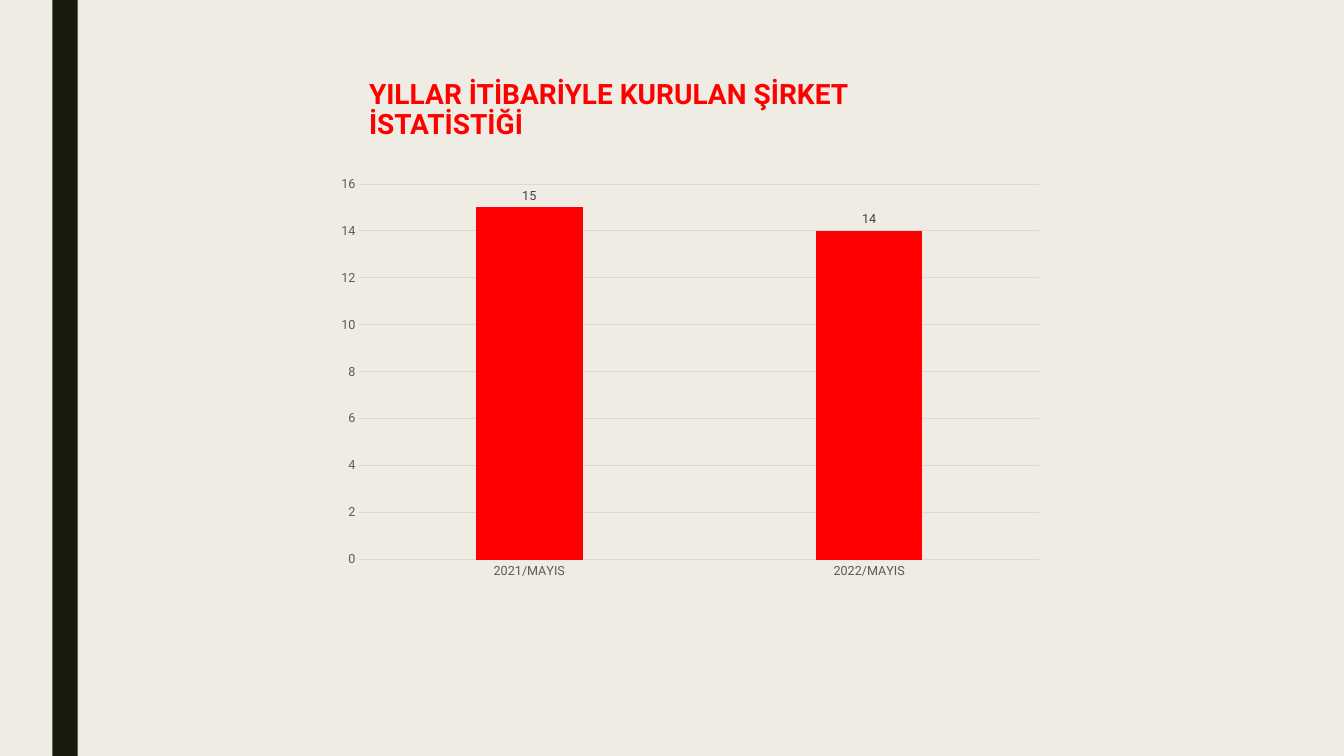
"""Build a slide with a column chart of companies founded per year."""
import pptx
import pptx.chart.data
import pptx.dml.color
import pptx.enum.chart
import pptx.enum.shapes
import pptx.enum.text
import pptx.util
from pptx.util import Inches

COLORS = {"background": "EFEDE3", "bar": "191B0E", "accent": "FF0000",
          "axis": "595959", "grid": "D9D9D9", "label": "404040", "text": "000000"}
FONT = "Roboto"


def rgb(name):
    return pptx.dml.color.RGBColor.from_string(COLORS[name])


def set_font(font, size, color):
    font.name = FONT
    font.size = pptx.util.Pt(size)
    font.color.rgb = rgb(color)


prs = pptx.Presentation()
prs.slide_width = Inches(13.33)
prs.slide_height = Inches(7.5)
s = prs.slides.add_slide(prs.slide_layouts[5])
s.background.fill.solid()
s.background.fill.fore_color.rgb = rgb("background")

bar = s.shapes.add_shape(pptx.enum.shapes.MSO_SHAPE.RECTANGLE,
                         Inches(0.52), 0, Inches(0.25), Inches(7.5))
bar.shadow.inherit = False
bar.fill.solid()
bar.fill.fore_color.rgb = rgb("bar")
bar.line.fill.background()

title = s.shapes.title
title.left, title.top = Inches(3.56), Inches(0.75)
title.width, title.height = Inches(5.93), Inches(0.42)
tf = title.text_frame
tf.text = "YILLAR İTİBARİYLE KURULAN ŞİRKET İSTATİSTİĞİ"
tf.word_wrap = True
tf.auto_size = pptx.enum.text.MSO_AUTO_SIZE.NONE
tf.vertical_anchor = pptx.enum.text.MSO_ANCHOR.TOP
p = tf.paragraphs[0]
p.alignment = pptx.enum.text.PP_ALIGN.LEFT
p.line_spacing = 0.89
r = p.runs[0]
set_font(r.font, 20, "accent")
r.font.bold = True

data = pptx.chart.data.CategoryChartData()
data.categories = ["2021/MAYIS", "2022/MAYIS"]
data.add_series("Series 1", (15, 14))
chart = s.shapes.add_chart(pptx.enum.chart.XL_CHART_TYPE.COLUMN_CLUSTERED,
                           Inches(3.24), Inches(1.67), Inches(7.21), Inches(4.15),
                           data).chart
chart.has_title = False
chart.has_legend = False
set_font(chart.font, 10, "text")

for axis in (chart.category_axis, chart.value_axis):
    axis.major_tick_mark = pptx.enum.chart.XL_TICK_MARK.NONE
    axis.minor_tick_mark = pptx.enum.chart.XL_TICK_MARK.NONE
    set_font(axis.tick_labels.font, 9, "axis")

chart.value_axis.minimum_scale = 0
chart.value_axis.has_major_gridlines = True
chart.value_axis.format.line.fill.background()
for line in (chart.category_axis.format.line,
             chart.value_axis.major_gridlines.format.line):
    line.color.rgb = rgb("grid")
    line.width = pptx.util.Pt(0.75)

plot = chart.plots[0]
plot.vary_by_categories = False
plot.gap_width = 219
plot.overlap = -27
series = plot.series[0]
series.format.fill.solid()
series.format.fill.fore_color.rgb = rgb("accent")
labels = series.data_labels
labels.show_value = True
labels.position = pptx.enum.chart.XL_LABEL_POSITION.OUTSIDE_END
set_font(labels.font, 9, "label")

prs.save("out.pptx")
